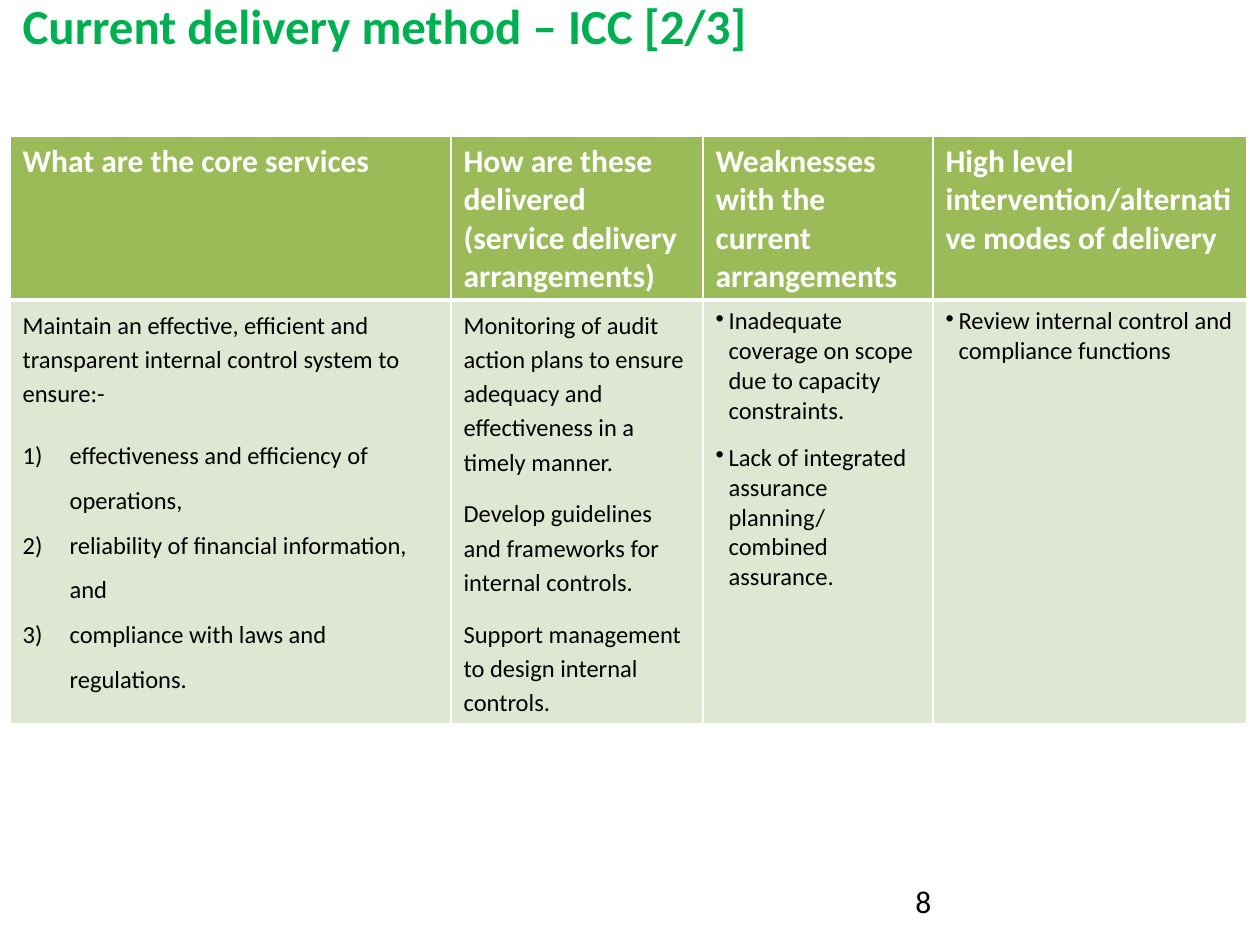
from dataclasses import dataclass

from lxml import etree
from pptx import Presentation
from pptx import util as u
from pptx.dml.color import RGBColor
from pptx.enum import text
from pptx.oxml import ns


@dataclass(frozen=True)
class Theme:
    font: str = "Calibri"
    title_color: str = "00B050"
    header_fill: str = "9BBB59"
    body_fill: str = "DEE7D1"
    light: str = "FFFFFF"
    dark: str = "000000"
    title_size: int = 28
    header_size: int = 18
    body_size: int = 14
    number_size: int = 18


@dataclass(frozen=True)
class Style:
    line: float = 1.0
    after: int = 0
    indent: int = 0
    bullet: tuple = ()


THEME = Theme()
PX_PER_INCH = 126

PLAIN = Style()
PROSE = Style(line=1.15, after=10)
NUMBERED = Style(line=1.5, indent=47, bullet=("buAutoNum", "type", "arabicParenR"))
DOT = ("buChar", "char", "•")
BULLET = Style(after=10, indent=13, bullet=DOT)
LAST_BULLET = Style(indent=13, bullet=DOT)

COLUMN_WIDTHS = (441, 252, 230, 314)
ROW_HEIGHTS = (164, 424)
HEADERS = (
    ["What are the core services"],
    ["How are these delivered", "(service delivery arrangements)"],
    ["Weaknesses with the current arrangements"],
    ["High level intervention/alternative modes of delivery"],
)
BODIES = (
    [
        ("Maintain an effective, efficient and transparent internal control system to ensure:-", PROSE),
        ("effectiveness and efficiency of operations,", NUMBERED),
        ("reliability of financial information, and", NUMBERED),
        ("compliance with laws and regulations.", NUMBERED),
    ],
    [
        ("Monitoring of audit action plans to ensure adequacy and effectiveness in a timely manner.", PROSE),
        ("Develop guidelines and frameworks for internal controls.", PROSE),
        ("Support management to design internal controls.", PROSE),
    ],
    [
        ("Inadequate coverage on scope due to capacity constraints.", BULLET),
        ("Lack of integrated assurance planning/ combined assurance.", BULLET),
    ],
    [("Review internal control and compliance functions", LAST_BULLET)],
)


def px(length):
    return u.Emu(round(length * 914400 / PX_PER_INCH))


def write(frame, paragraphs, size, color, bold=False):
    """Fill a text frame from (wording, style) pairs."""
    for index, (wording, style) in enumerate(paragraphs):
        para = frame.add_paragraph() if index else frame.paragraphs[0]
        para.alignment = text.PP_ALIGN.LEFT
        if style.bullet:
            tag, key, value = style.bullet
            props = para._p.get_or_add_pPr()
            props.set("marL", str(px(style.indent)))
            props.set("indent", str(-px(style.indent)))
            etree.SubElement(props, ns.qn(f"a:{tag}")).set(key, value)
        para.line_spacing = style.line
        para.space_before = u.Pt(0)
        para.space_after = u.Pt(style.after)
        span = para.add_run()
        span.text = wording
        span.font.name = THEME.font
        span.font.size = u.Pt(size)
        span.font.bold = bold
        span.font.color.rgb = RGBColor.from_string(color)


def set_borders(cell, top, bottom):
    """Draw white cell edges; widths are in points."""
    props = cell._tc.get_or_add_tcPr()
    for tag, width in (("lnL", 1), ("lnR", 1), ("lnT", top), ("lnB", bottom)):
        line = etree.SubElement(props, ns.qn(f"a:{tag}"), w=str(u.Pt(width)))
        fill = etree.SubElement(line, ns.qn("a:solidFill"))
        etree.SubElement(fill, ns.qn("a:srgbClr"), val=THEME.light)


def set_fill(cell, color):
    cell.fill.solid()
    cell.fill.fore_color.rgb = RGBColor.from_string(color)


def add_title(page, left, top, width, height):
    title = page.shapes.title
    title.left, title.top, title.width, title.height = map(px, (left, top, width, height))
    frame = title.text_frame
    frame.word_wrap = True
    frame.auto_size = text.MSO_AUTO_SIZE.SHAPE_TO_FIT_TEXT
    frame.vertical_anchor = text.MSO_ANCHOR.TOP
    write(frame, [("Current delivery method – ICC [2/3]", PLAIN)],
          THEME.title_size, THEME.title_color, bold=True)


def add_services_table(page, left, top):
    table = page.shapes.add_table(
        len(ROW_HEIGHTS), len(COLUMN_WIDTHS), px(left), px(top),
        px(sum(COLUMN_WIDTHS)), px(sum(ROW_HEIGHTS))).table
    table.horz_banding = False
    for row, height in zip(table.rows, ROW_HEIGHTS):
        row.height = px(height)

    for index, (width, header, body) in enumerate(zip(COLUMN_WIDTHS, HEADERS, BODIES)):
        table.columns[index].width = px(width)

        # Header cell
        cell = table.cell(0, index)
        set_borders(cell, top=1, bottom=3)
        set_fill(cell, THEME.header_fill)
        write(cell.text_frame, [(wording, PLAIN) for wording in header],
              THEME.header_size, THEME.light, bold=True)

        # Body cell
        cell = table.cell(1, index)
        set_borders(cell, top=3, bottom=1)
        set_fill(cell, THEME.body_fill)
        write(cell.text_frame, body, THEME.body_size, THEME.dark)


def add_page_number(page, left, top, width, height):
    box = page.shapes.add_textbox(px(left), px(top), px(width), px(height))
    frame = box.text_frame
    frame.word_wrap = True
    frame.vertical_anchor = text.MSO_ANCHOR.MIDDLE
    write(frame, [("8", PLAIN)], THEME.number_size, THEME.dark)


def main():
    deck = Presentation()
    deck.slide_width, deck.slide_height = px(1260), px(945)
    page = deck.slides.add_slide(deck.slide_layouts.get_by_name("Title Only"))
    add_services_table(page, 10, 136)
    add_title(page, 10, -11, 1134, 72)
    add_page_number(page, 903, 876, 294, 50)
    deck.save("out.pptx")


if __name__ == "__main__":
    main()
